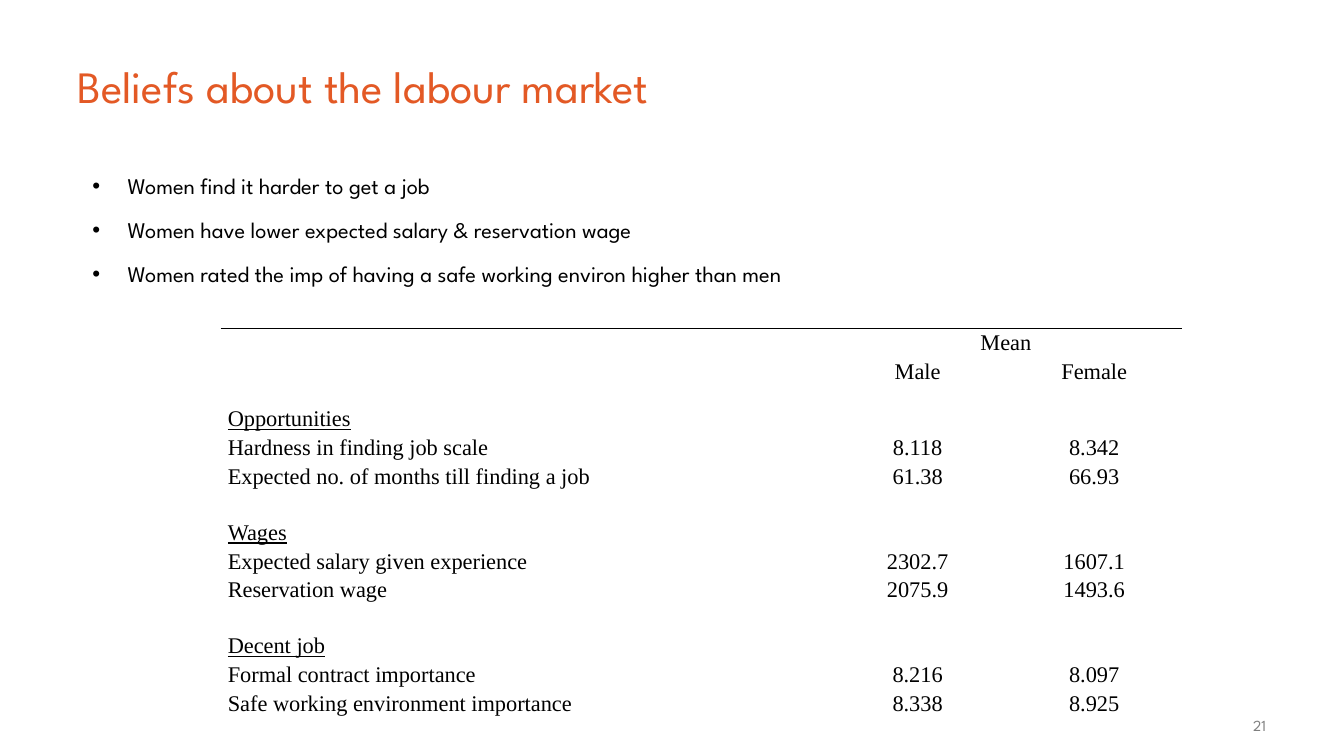
import dataclasses

import lxml.etree
import pptx
import pptx.dml.color
import pptx.enum.text
import pptx.oxml
import pptx.oxml.ns
import pptx.util

Cm = pptx.util.Cm
Pt = pptx.util.Pt
ALIGN = pptx.enum.text.PP_ALIGN
ANCHOR = pptx.enum.text.MSO_ANCHOR
NO_TABLE_STYLE = "{2D5ABB26-0587-4C30-8999-92F81FD0307C}"


@dataclasses.dataclass(frozen=True)
class Theme:
    sans: str = "League Spartan"
    serif: str = "Times New Roman"
    background: str = "FFFFFF"
    accent: str = "E35925"
    ink: str = "000000"
    muted: str = "7F7F7F"
    title_size: int = 32
    body_size: int = 16
    number_size: int = 11
    empty_cell_size: int = 8


def add_xml(parent, tag, **attributes):
    return lxml.etree.SubElement(parent, pptx.oxml.ns.qn(tag), attributes)


def write_text(paragraph, text, *, font, size, color, align=ALIGN.LEFT,
               underline=False, line_spacing=None, before=0, after=0):
    paragraph.alignment = align
    paragraph.line_spacing = line_spacing
    paragraph.space_before = Pt(before)
    paragraph.space_after = Pt(after)
    run = paragraph.add_run()
    run.text = text
    run.font.name = font
    run.font.size = Pt(size)
    run.font.underline = underline
    run.font.color.rgb = pptx.dml.color.RGBColor.from_string(color)


class SlideBuilder:
    def __init__(self, slide, theme):
        self.slide = slide
        self.theme = theme
        fill = slide.background.fill
        fill.solid()
        fill.fore_color.rgb = pptx.dml.color.RGBColor.from_string(theme.background)

    def text_frame(self, left, top, width, height, margin=0.25, anchor=ANCHOR.TOP):
        shape = self.slide.shapes.add_textbox(Cm(left), Cm(top), Cm(width), Cm(height))
        frame = shape.text_frame
        frame.word_wrap = True
        frame.vertical_anchor = anchor
        frame.margin_left = frame.margin_right = Cm(0.25)
        frame.margin_top = frame.margin_bottom = Cm(margin)
        return frame

    def title(self, text):
        frame = self.text_frame(1.7, 0.53, 30.48, 3.23, anchor=ANCHOR.MIDDLE)
        write_text(frame.paragraphs[0], text, font=self.theme.sans,
                   size=self.theme.title_size, color=self.theme.accent)

    def bullets(self, lines):
        frame = self.text_frame(1.7, 4.09, 30.48, 13.08)
        for index, line in enumerate(lines):
            paragraph = frame.add_paragraph() if index else frame.paragraphs[0]
            write_text(paragraph, line, font=self.theme.sans, size=self.theme.body_size,
                       color=self.theme.ink, before=4.4, after=8)
            properties = paragraph._p.get_or_add_pPr()
            properties.set("marL", str(Cm(1.27)))
            properties.set("indent", str(-Cm(0.89)))
            add_xml(add_xml(properties, "a:buClr"), "a:srgbClr", val=self.theme.ink)
            add_xml(properties, "a:buFont", typeface="Arial")
            add_xml(properties, "a:buChar", char="•")

    def slide_number(self, text):
        frame = self.text_frame(29.01, 17.91, 3.15, 0.61, margin=0.13)
        write_text(frame.paragraphs[0], text, font=self.theme.sans,
                   size=self.theme.number_size, color=self.theme.muted, align=ALIGN.RIGHT)

    def table(self, rows, headings, widths, heights):
        frame = self.slide.shapes.add_table(
            len(rows), len(widths), Cm(5.56), Cm(8.28), Cm(sum(widths)), Cm(sum(heights)))
        table = frame.table
        table.first_row = table.horz_banding = False
        table._tbl.tblPr.find(pptx.oxml.ns.qn("a:tableStyleId")).text = NO_TABLE_STYLE
        for column, width in zip(table.columns, widths):
            column.width = Cm(width)
        for row, height in zip(table.rows, heights):
            row.height = Cm(height)
        for row_index, values in enumerate(rows):
            for column_index, value in enumerate(values):
                self.table_cell(table.cell(row_index, column_index), value,
                                align=ALIGN.CENTER if column_index else ALIGN.LEFT,
                                underline=value in headings, top_line=row_index == 0)
        table.cell(0, 1).merge(table.cell(0, 2))

    def table_cell(self, cell, value, align, underline, top_line):
        cell.margin_left = cell.margin_right = Cm(0.18)
        cell.margin_top = cell.margin_bottom = 0
        paragraph = cell.text_frame.paragraphs[0]
        if value:
            write_text(paragraph, value, font=self.theme.serif, size=self.theme.body_size,
                       color=self.theme.ink, align=align, underline=underline,
                       line_spacing=1.07)
        else:
            add_xml(paragraph._p, "a:endParaRPr", sz=str(self.theme.empty_cell_size * 100))
        if top_line:
            line = add_xml(cell._tc.get_or_add_tcPr(), "a:lnT", w=str(Pt(1)))
            add_xml(add_xml(line, "a:solidFill"), "a:srgbClr", val=self.theme.ink)
        cell.fill.background()


def main():
    presentation = pptx.Presentation()
    presentation.slide_width = Cm(33.87)
    presentation.slide_height = Cm(19.05)
    slide = presentation.slides.add_slide(presentation.slide_layouts[6])
    builder = SlideBuilder(slide, Theme())

    builder.bullets([
        "Women find it harder to get a job",
        "Women have lower expected salary & reservation wage",
        "Women rated the imp of having a safe working environ higher than men",
    ])
    builder.title("Beliefs about the labour market")
    builder.slide_number("21")

    sections = {
        "Opportunities": [
            ("Hardness in finding job scale", "8.118", "8.342"),
            ("Expected no. of months till finding a job", "61.38", "66.93"),
        ],
        "Wages": [
            ("Expected salary given experience", "2302.7", "1607.1"),
            ("Reservation wage", "2075.9", "1493.6"),
        ],
        "Decent job": [
            ("Formal contract importance", "8.216", "8.097"),
            ("Safe working environment importance", "8.338", "8.925"),
        ],
    }
    line_height, gap_height, section_end_height = 0.67, 0.48, 1.41
    rows = [("", "Mean", ""), ("", "Male", "Female"), ("", "", "")]
    heights = [line_height, line_height, gap_height]
    for heading, measures in sections.items():
        rows += [(heading, "", ""), *measures]
        heights += [line_height, line_height, section_end_height]
    heights[-1] = line_height
    builder.table(rows, sections, widths=[15.34, 4.45, 4.45], heights=heights)

    presentation.save("out.pptx")


if __name__ == "__main__":
    main()
